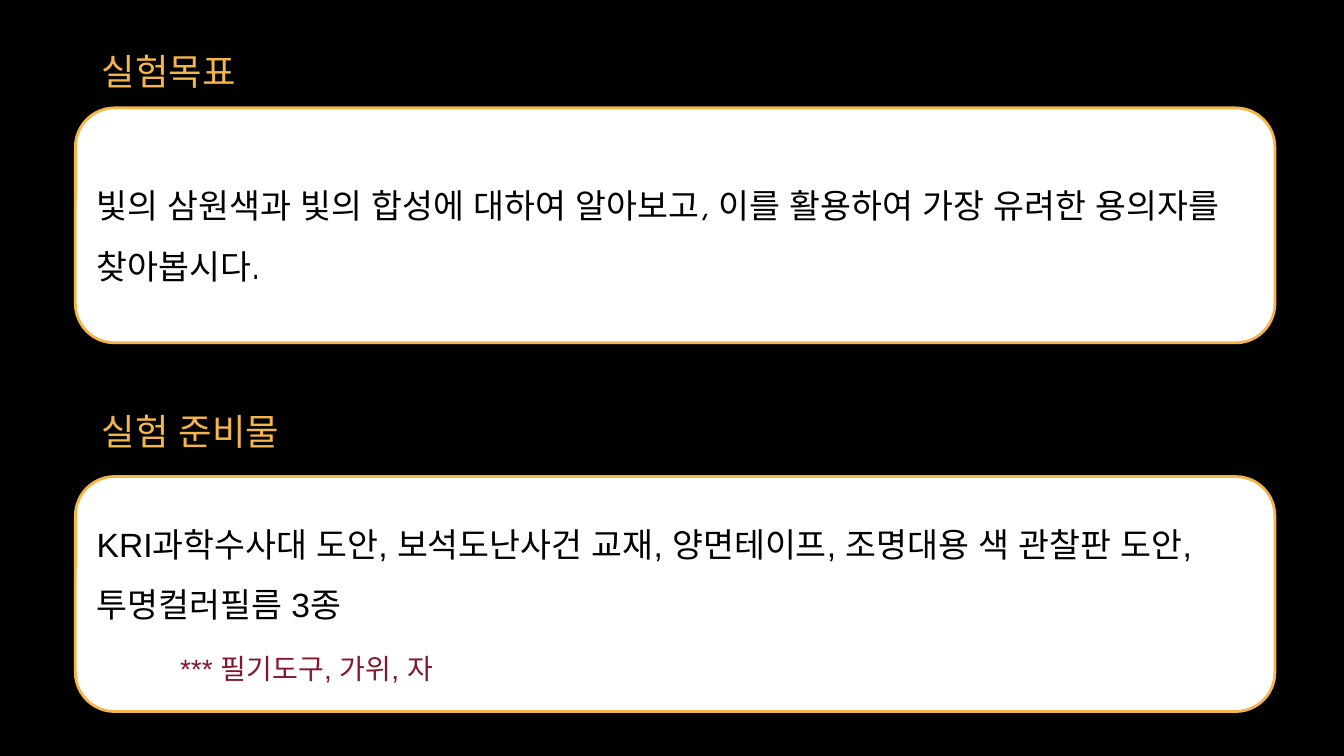
from dataclasses import dataclass

from lxml import etree
from pptx import Presentation
from pptx import util as u
from pptx.dml.color import RGBColor
from pptx.enum import shapes, text
from pptx.oxml import ns

GOLD, WHITE, BLACK, WINE = "F4B54B", "FFFFFF", "000000", "811731"
DISPLAY, BODY = "TeX Gyre Adventor", "Arial"
HEADING_LEFT, HEADING_HEIGHT = 2.31, 1.22
PANEL_LEFT, PANEL_WIDTH, PANEL_HEIGHT = 1.9, 30.23, 5.92


@dataclass
class Line:
    words: str
    size: float
    font: str
    color: str
    indent: float = 0
    space_before: float = 0


@dataclass
class Section:
    heading: str
    heading_top: float
    heading_width: float
    panel_top: float
    lines: list[Line]


SECTIONS = [
    Section("실험목표", 0.99, 4.98, 2.72, [
        Line("빛의 삼원색과 빛의 합성에 대하여 알아보고, 이를 활용하여 "
             "가장 유려한 용의자를 찾아봅시다.", 24, DISPLAY, BLACK),
    ]),
    Section("실험 준비물", 10.06, 5.84, 12.01, [
        Line("KRI과학수사대 도안, 보석도난사건 교재, 양면테이프, "
             "조명대용 색 관찰판 도안, 투명컬러필름 3종", 24, BODY, BLACK),
        Line("*** 필기도구, 가위, 자", 20, BODY, WINE, indent=2.1, space_before=7),
    ]),
]


def rgb(color: str) -> RGBColor:
    return RGBColor.from_string(color)


def add_line(paragraph, line: Line) -> None:
    run = paragraph.add_run()
    run.text = line.words
    run.font.size = u.Pt(line.size)
    run.font.name = line.font
    run.font.color.rgb = rgb(line.color)
    # Korean text takes its font from the East Asian slot
    east_asian = etree.SubElement(run._r.get_or_add_rPr(), ns.qn("a:ea"))
    east_asian.set("typeface", line.font)
    paragraph.alignment = text.PP_ALIGN.LEFT
    if line.space_before:
        paragraph.space_before = u.Pt(line.space_before)
    if line.indent:
        properties = paragraph._p.get_or_add_pPr()
        properties.set("marL", str(u.Cm(line.indent)))
        properties.set("indent", "0")


def add_heading(slide, section: Section) -> None:
    heading = slide.shapes.add_textbox(
        u.Cm(HEADING_LEFT), u.Cm(section.heading_top),
        u.Cm(section.heading_width), u.Cm(HEADING_HEIGHT))
    frame = heading.text_frame
    frame.word_wrap = True
    frame.margin_left = frame.margin_right = u.Cm(0.25)
    frame.margin_top = frame.margin_bottom = u.Cm(0.25)
    add_line(frame.paragraphs[0], Line(section.heading, 26, DISPLAY, GOLD))


def add_panel(slide, section: Section) -> None:
    panel = slide.shapes.add_shape(
        shapes.MSO_SHAPE.ROUNDED_RECTANGLE,
        u.Cm(PANEL_LEFT), u.Cm(section.panel_top),
        u.Cm(PANEL_WIDTH), u.Cm(PANEL_HEIGHT))
    panel.shadow.inherit = False
    panel.fill.solid()
    panel.fill.fore_color.rgb = rgb(WHITE)
    panel.line.color.rgb = rgb(GOLD)
    panel.line.width = u.Pt(2)
    frame = panel.text_frame
    frame.word_wrap = True
    frame.vertical_anchor = text.MSO_ANCHOR.MIDDLE
    for index, line in enumerate(section.lines):
        paragraph = frame.add_paragraph() if index else frame.paragraphs[0]
        paragraph.line_spacing = 1.5
        add_line(paragraph, line)


def main() -> None:
    deck = Presentation()
    deck.slide_width, deck.slide_height = u.Cm(33.87), u.Cm(19.05)
    slide = deck.slides.add_slide(deck.slide_layouts[6])

    # Black background
    slide.background.fill.solid()
    slide.background.fill.fore_color.rgb = rgb(BLACK)

    # Goal and materials, each a heading above a panel
    for section in SECTIONS:
        add_heading(slide, section)
        add_panel(slide, section)

    deck.save("out.pptx")


if __name__ == "__main__":
    main()
